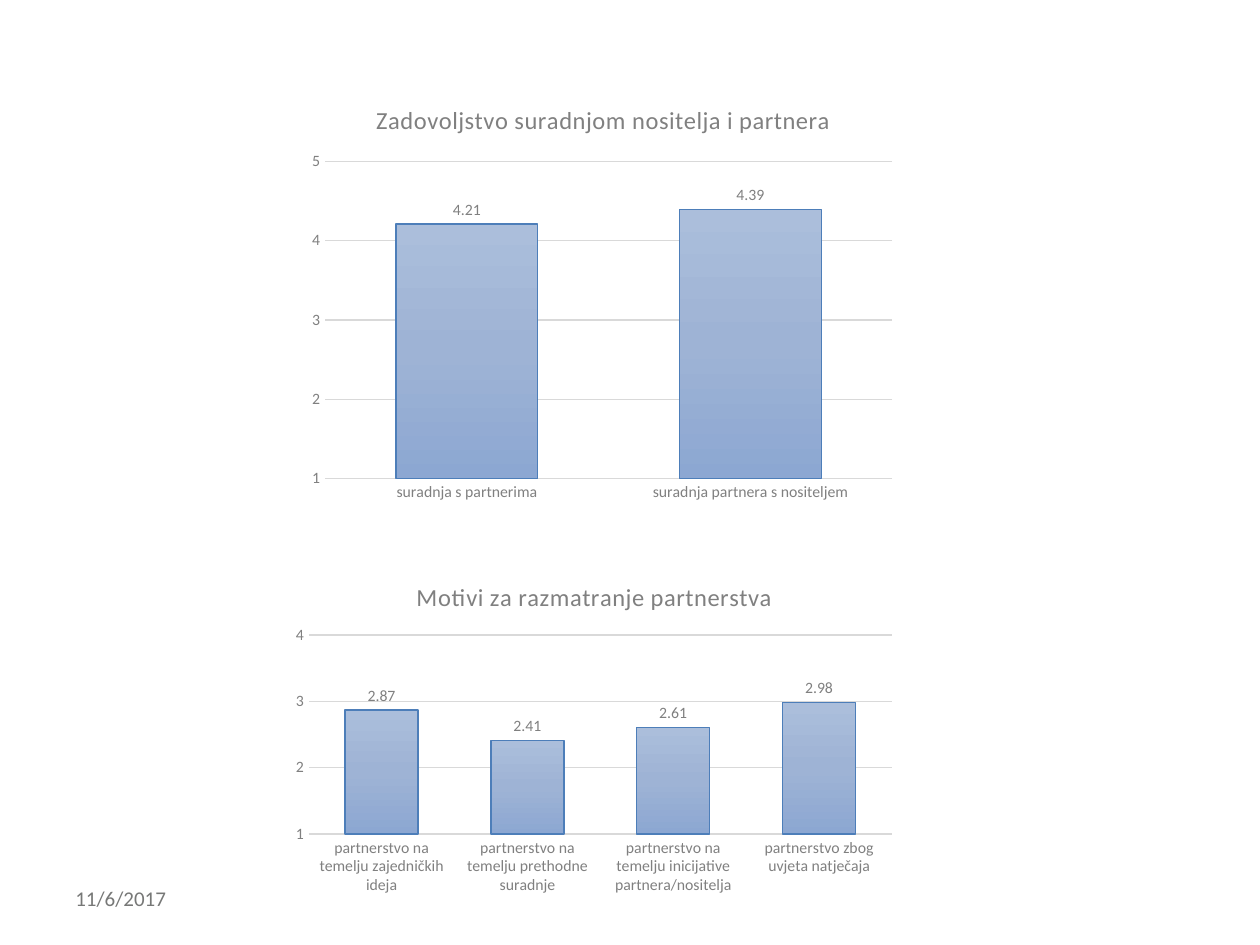
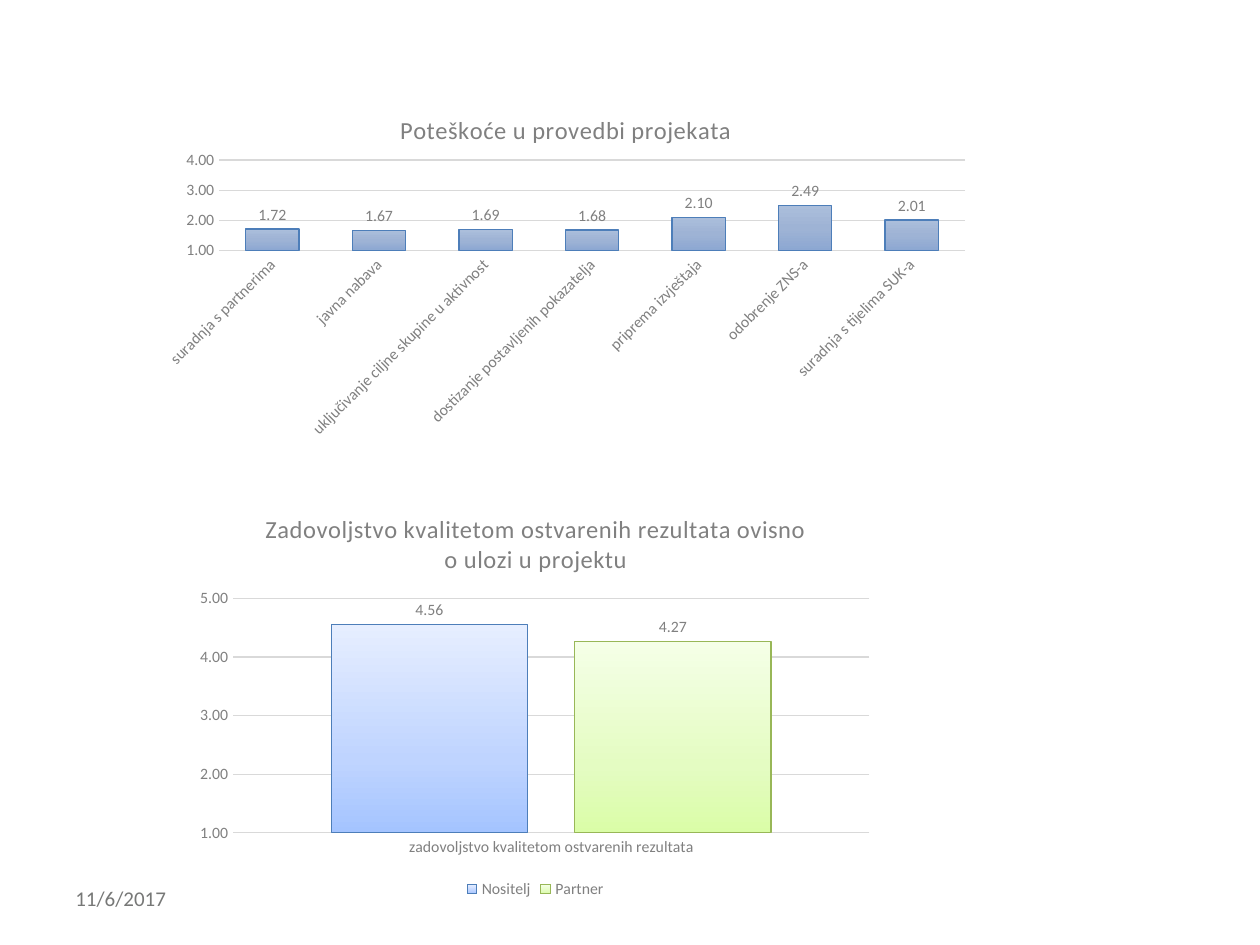
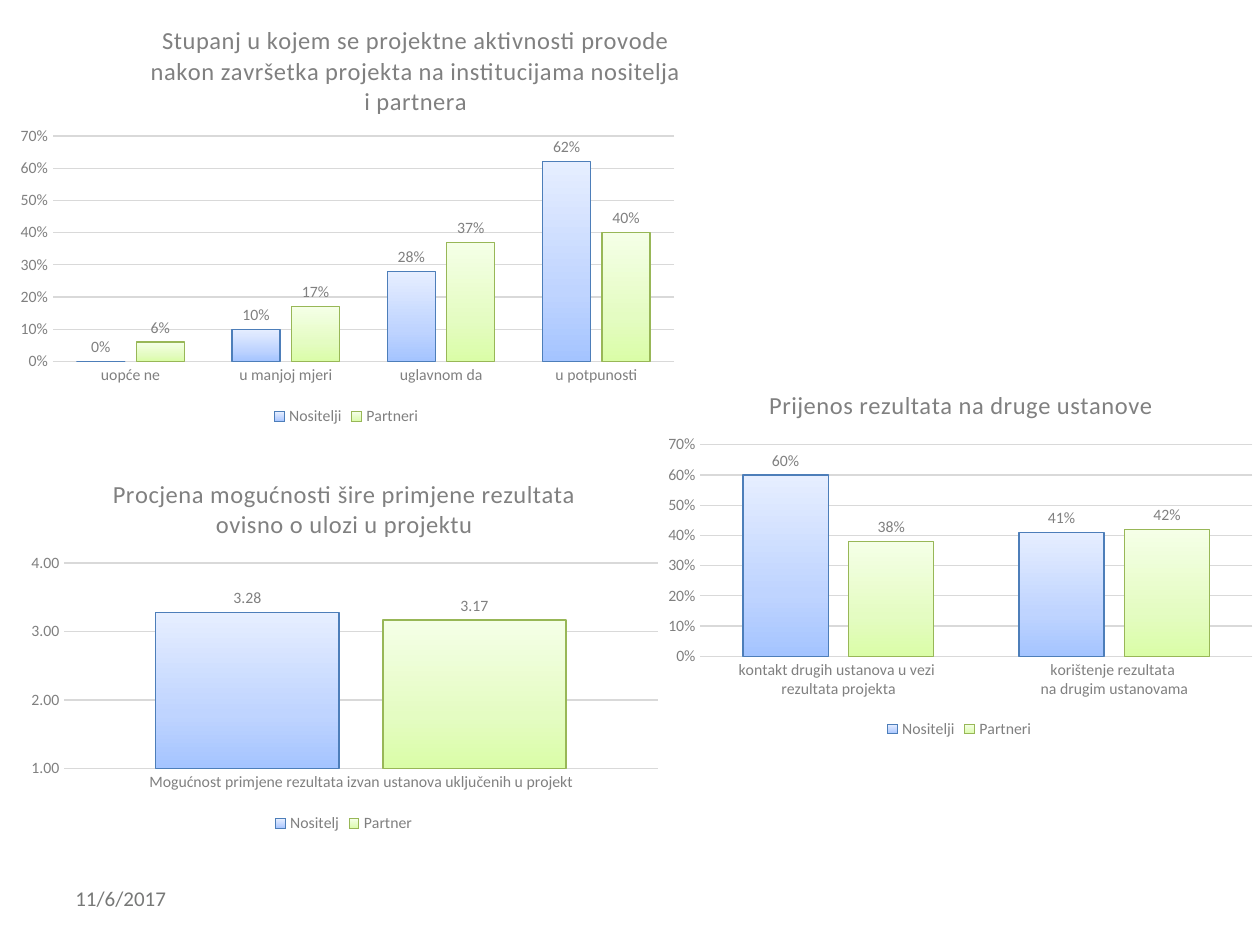
from pptx import Presentation
from pptx.chart.data import CategoryChartData
from pptx.dml.color import RGBColor
from pptx.enum.chart import (XL_CHART_TYPE, XL_LABEL_POSITION,
                             XL_LEGEND_POSITION, XL_TICK_MARK)
from pptx.enum.text import MSO_ANCHOR
from pptx.oxml import parse_xml
from pptx.oxml.ns import nsdecls
from pptx.util import Inches, Pt

COLUMN = XL_CHART_TYPE.COLUMN_CLUSTERED
OUTSIDE = XL_LABEL_POSITION.OUTSIDE_END
BOTTOM = XL_LEGEND_POSITION.BOTTOM
NO_TICK = XL_TICK_MARK.NONE
TOP = MSO_ANCHOR.TOP

HUES = {"text": "808080", "date": "777877", "base": "000000", "grid": "D9D9D9",
        "blue": "4D7EB9", "green": "98B757"}
# Each look: line colour, gradient angle, gradient stops
STEEL = ("blue", 90, {0: "ABBEDB", 50: "9EB3D5", 100: "8CA7D2"})
SKY = ("blue", 270, {0: "A4C4FF", 35: "BFD4FF", 100: "E6EEFF"})
LIME = ("green", 270, {0: "DAFDA7", 35: "E4FCC2", 100: "F5FFE7"})

SCORE5 = {"minimum_scale": 1, "maximum_scale": 5, "major_unit": 1}
SCORE4 = {**SCORE5, "maximum_scale": 4}
SHARE = {"minimum_scale": 0, "maximum_scale": 0.7, "major_unit": 0.1}
GENERAL, FIXED, PERCENT = "General", "0.00", "0%"


def assign(item, values):
    for name, value in values.items():
        setattr(item, name, value)


def pin(parent, index, frame, box, inner=False):
    """Place a chart part by slide inches, as shares of the chart frame."""
    for old in parent.xpath("./c:layout"):
        parent.remove(old)
    left, top, wide, high = frame
    parts = [("x", (box[0] - left) / wide), ("y", (box[1] - top) / high)]
    if inner:
        parts += [("w", box[2] / wide), ("h", box[3] / high)]
    target = '<c:layoutTarget val="inner"/>' if inner else ""
    modes = "".join(f'<c:{key}Mode val="edge"/>' for key in "xy")
    sizes = "".join(f'<c:{key} val="{val:.4f}"/>' for key, val in parts)
    parent.insert(index, parse_xml(
        f'<c:layout {nsdecls("c")}><c:manualLayout>{target}{modes}{sizes}'
        '</c:manualLayout></c:layout>'))


class Deck:
    def __init__(self):
        self.show = Presentation()
        self.show.slide_width = Inches(10)
        self.show.slide_height = Inches(7.5)
        self.slide = None

    def page(self):
        self.slide = self.show.slides.add_slide(self.show.slide_layouts[6])
        self.date("11/6/2017")

    def font(self, font, size, hue="text"):
        assign(font, {"name": "Calibri", "size": Pt(size), "bold": False})
        font.color.rgb = RGBColor.from_string(HUES[hue])

    def line(self, line, hue):
        line.width = Pt(0.75)
        line.color.rgb = RGBColor.from_string(HUES[hue])

    def date(self, text):
        box = self.slide.shapes.add_textbox(
            *map(Inches, (0.5, 6.98, 2.33, 0.4)))
        frame = box.text_frame
        assign(frame, {"word_wrap": True, "vertical_anchor": TOP})
        frame.text = text
        self.font(frame.paragraphs[0].runs[0].font, 12, "date")

    def title(self, chart, text, frame, spot):
        chart.has_title = True
        words = chart.chart_title.text_frame
        words.text = text
        self.font(words.paragraphs[0].runs[0].font, 14)
        for props in chart.element.xpath("//c:title//a:rPr"):
            props.set("spc", "20")
        pin(chart.element.xpath("//c:title")[0], 1, frame, spot)

    def axes(self, chart, scale, form, tilt):
        cats, vals = chart.category_axis, chart.value_axis
        for axis in (cats, vals):
            assign(axis, {"major_tick_mark": NO_TICK,
                          "minor_tick_mark": NO_TICK})
            self.font(axis.tick_labels.font, 9)
        self.line(cats.format.line, "grid")
        cats.has_major_gridlines = False
        body = chart.element.xpath("//c:catAx/c:txPr/a:bodyPr")[0]
        body.set("rot", "-2700000" if tilt else "-60000000")
        assign(vals, scale)
        vals.format.line.fill.background()
        self.line(vals.major_gridlines.format.line, "grid")
        assign(vals.tick_labels, {"number_format": form,
                                  "number_format_is_linked": False})

    def bars(self, chart, looks, form):
        plot = chart.plots[0]
        assign(plot, {"gap_width": 100, "overlap": -24,
                      "vary_by_categories": False, "has_data_labels": True})
        assign(plot.data_labels, {
            "show_value": True, "position": OUTSIDE, "number_format": form,
            "number_format_is_linked": False})
        self.font(plot.data_labels.font, 9)
        for bar, (hue, _, _) in zip(plot.series, looks):
            self.line(bar.format.line, hue)
        for props, (_, angle, stops) in zip(
                chart.element.xpath("//c:ser/c:spPr"), looks):
            marks = "".join(
                f'<a:gs pos="{pos * 1000}"><a:srgbClr val="{hue}"/></a:gs>'
                for pos, hue in stops.items())
            props.insert(0, parse_xml(
                f'<a:gradFill {nsdecls("a")} rotWithShape="1">'
                f'<a:gsLst>{marks}</a:gsLst>'
                f'<a:lin ang="{angle * 60000}" scaled="0"/></a:gradFill>'))

    def chart(self, frame, title, spot, plot, cats, series, scale, form,
              tilt=False):
        """Add a column chart; spot and plot place its title and plot area."""
        data = CategoryChartData()
        data.categories = cats
        for name, vals in series.items():
            data.add_series(name, vals)
        chart = self.slide.shapes.add_chart(
            COLUMN, *map(Inches, frame), data).chart
        self.font(chart.font, 10, "base")
        self.title(chart, title, frame, spot)
        self.axes(chart, scale, form, tilt)
        pair = len(series) > 1
        self.bars(chart, (SKY, LIME) if pair else (STEEL,), form)
        chart.has_legend = pair
        if pair:
            assign(chart.legend, {"position": BOTTOM,
                                  "include_in_layout": False})
            self.font(chart.legend.font, 9)
        pin(chart.element.xpath("//c:plotArea")[0], 0, frame, plot, True)


def main():
    deck = Deck()

    deck.page()
    deck.chart((2.38, 0.66, 4.79, 3.38),
               "Zadovoljstvo suradnjom nositelja i partnera",
               (2.95, 0.78), (2.58, 1.28, 4.5, 2.52),
               ["suradnja s partnerima", "suradnja partnera s nositeljem"],
               {"Series 1": (4.21, 4.39)}, SCORE5, GENERAL)
    deck.chart((2.25, 4.47, 4.93, 2.69),
               "Motivi za razmatranje partnerstva",
               (3.27, 4.57), (2.45, 5.04, 4.63, 1.58),
               ["partnerstvo na temelju zajedničkih ideja",
                "partnerstvo na temelju prethodne suradnje",
                "partnerstvo na temelju inicijative partnera/nositelja",
                "partnerstvo zbog uvjeta natječaja"],
               {"Series 1": (2.87, 2.41, 2.61, 2.98)}, SCORE4, GENERAL)

    deck.page()
    deck.chart((1.19, 0.75, 6.6, 2.75),
               "Poteškoće u provedbi projekata",
               (3.14, 0.86), (1.74, 1.27, 5.92, 0.72),
               ["suradnja s partnerima", "javna nabava",
                "uključivanje ciljne skupine u aktivnost",
                "dostizanje postavljenih pokazatelja",
                "priprema izvještaja", "odobrenje ZNS-a",
                "suradnja s tijelima SUK-a"],
               {"Series 1": (1.72, 1.67, 1.69, 1.68, 2.1, 2.49, 2.01)},
               SCORE4, FIXED, tilt=True)
    deck.chart((1.49, 3.92, 5.52, 3.25),
               "Zadovoljstvo kvalitetom ostvarenih rezultata ovisno "
               "o ulozi u projektu",
               (2.07, 4.03), (1.85, 4.75, 5.05, 1.86),
               ["zadovoljstvo kvalitetom ostvarenih rezultata"],
               {"Nositelj": (4.56,), "Partner": (4.27,)}, SCORE5, FIXED)

    deck.page()
    deck.chart((0.05, 0, 5.4, 3.42),
               "Stupanj u kojem se projektne aktivnosti provode nakon "
               "završetka projekta na institucijama nositelja i partnera",
               (1.16, 0.15), (0.42, 1.08, 4.93, 1.79),
               ["uopće ne", "u manjoj mjeri", "uglavnom da", "u potpunosti"],
               {"Nositelji": (0, 0.1, 0.28, 0.62),
                "Partneri": (0.06, 0.17, 0.37, 0.4)}, SHARE, PERCENT)
    deck.chart((0.14, 3.65, 5.18, 3),
               "Procjena mogućnosti šire primjene rezultata "
               "ovisno o ulozi u projektu",
               (0.86, 3.75), (0.51, 4.47, 4.71, 1.63),
               ["Mogućnost primjene rezultata izvan ustanova "
                "uključenih u projekt"],
               {"Nositelj": (3.28,), "Partner": (3.17,)}, SCORE4, FIXED)
    deck.chart((5.2, 2.93, 4.83, 2.97),
               "Prijenos rezultata na druge ustanove",
               (6.07, 3.04), (5.56, 3.53, 4.38, 1.68),
               ["kontakt drugih ustanova u vezi \nrezultata projekta",
                "korištenje rezultata \nna drugim ustanovama"],
               {"Nositelji": (0.6, 0.41), "Partneri": (0.38, 0.42)},
               SHARE, PERCENT)

    deck.show.save("out.pptx")


if __name__ == "__main__":
    main()
